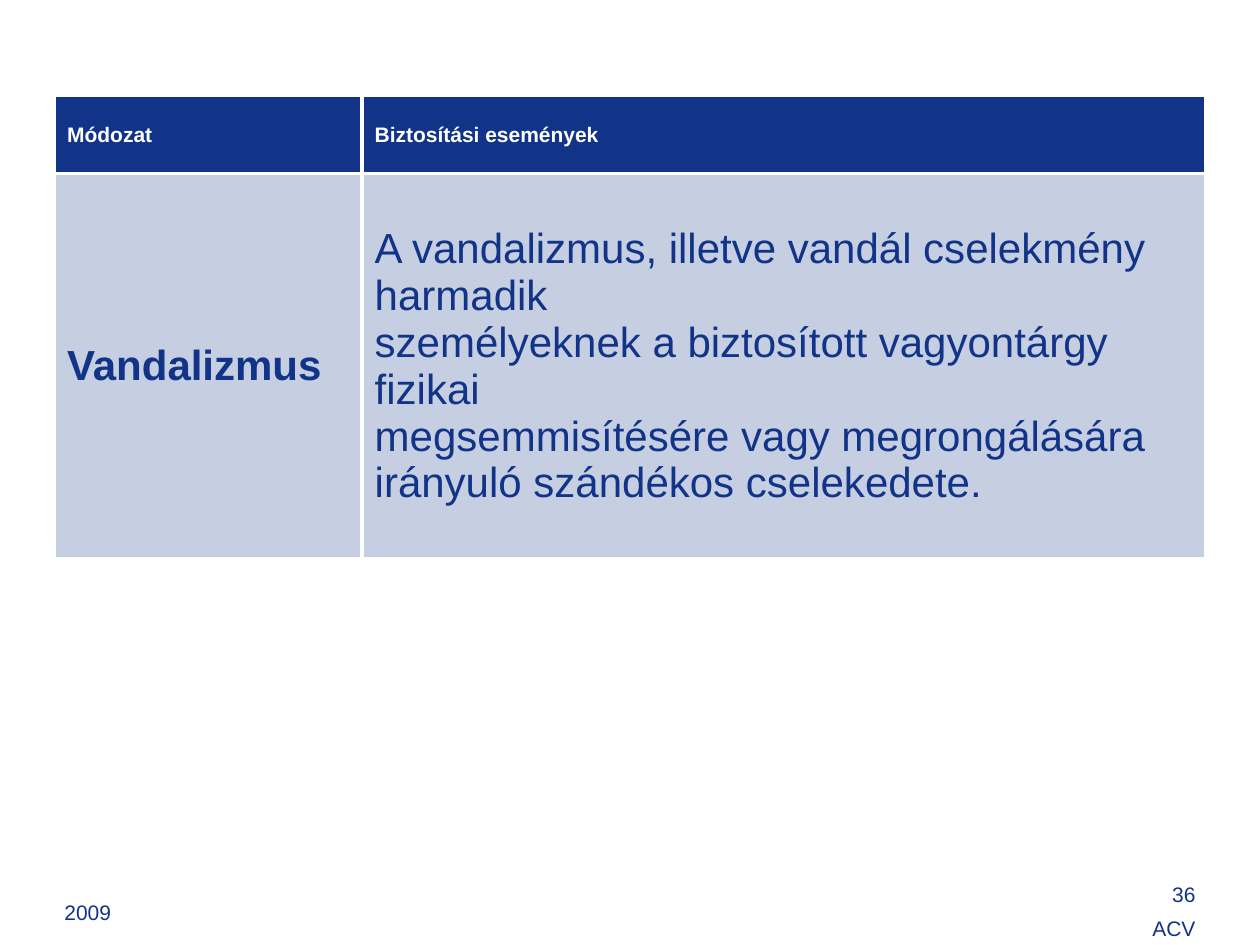
from lxml import etree
from pptx import Presentation
from pptx.dml.color import RGBColor as Rgb
from pptx.enum.text import MSO_ANCHOR as Anchor, PP_ALIGN as Align
from pptx.oxml.ns import qn
from pptx.util import Cm, Pt

HUES = {"navy": "113388", "pale": "C6CEE2", "white": "FFFFFF"}


def write(para, text, size, hue, bold=False):
    run = para.add_run()
    run.text = text
    font = run.font
    font.name = "Arial"
    font.size = Pt(size)
    font.bold = bold
    font.color.rgb = Rgb.from_string(HUES[hue])


def edge(cell):
    props = cell._tc.get_or_add_tcPr()
    for spot, side in enumerate(("lnL", "lnR", "lnT", "lnB")):
        line = etree.Element(qn(f"a:{side}"), w=str(Pt(2.25)))
        fill = etree.SubElement(line, qn("a:solidFill"))
        etree.SubElement(fill, qn("a:srgbClr"), val=HUES["white"])
        props.insert(spot, line)


deck = Presentation()
deck.slide_width = Cm(25.4)
deck.slide_height = Cm(19.05)
slide = deck.slides.add_slide(deck.slide_layouts[6])

feet = [
    (1.3, 0.68, Align.LEFT, ["2009"]),
    (18.21, 0.25, Align.RIGHT, ["36", "ACV"]),
]
for left, inset, align, lines in feet:
    box = slide.shapes.add_textbox(Cm(left), Cm(17.53), Cm(5.89), Cm(1.52))
    frame = box.text_frame
    frame.word_wrap = True
    frame.margin_left = frame.margin_right = frame.margin_bottom = 0
    frame.margin_top = Cm(inset)
    for spot, text in enumerate(lines):
        para = frame.add_paragraph() if spot else frame.paragraphs[0]
        para.alignment = align
        if spot:
            para.space_before = Pt(4.8)
        write(para, text, 12, "navy")

rows = [
    (1.57, "navy", "white", 12, ["Módozat", "Biztosítási események"]),
    (7.77, "pale", "navy", 24, [
        "Vandalizmus",
        "A vandalizmus, illetve vandál cselekmény harmadik\n"
        "személyeknek a biztosított vagyontárgy fizikai\n"
        "megsemmisítésére vagy megrongálására irányuló szándékos cselekedete.",
    ]),
]
widths = [6.2, 17.0]
table = slide.shapes.add_table(
    2, 2, Cm(1.1), Cm(1.93), Cm(sum(widths)), Cm(9.34)).table
for col, width in zip(table.columns, widths):
    col.width = Cm(width)
for row, (height, back, ink, size, texts) in enumerate(rows):
    table.rows[row].height = Cm(height)
    for col, text in enumerate(texts):
        cell = table.cell(row, col)
        cell.vertical_anchor = Anchor.MIDDLE
        cell.fill.solid()
        cell.fill.fore_color.rgb = Rgb.from_string(HUES[back])
        edge(cell)
        para = cell.text_frame.paragraphs[0]
        for spot, line in enumerate(text.split("\n")):
            if spot:
                para.add_line_break()
            write(para, line, size, ink, row == 0 or col == 0)

deck.save("out.pptx")
